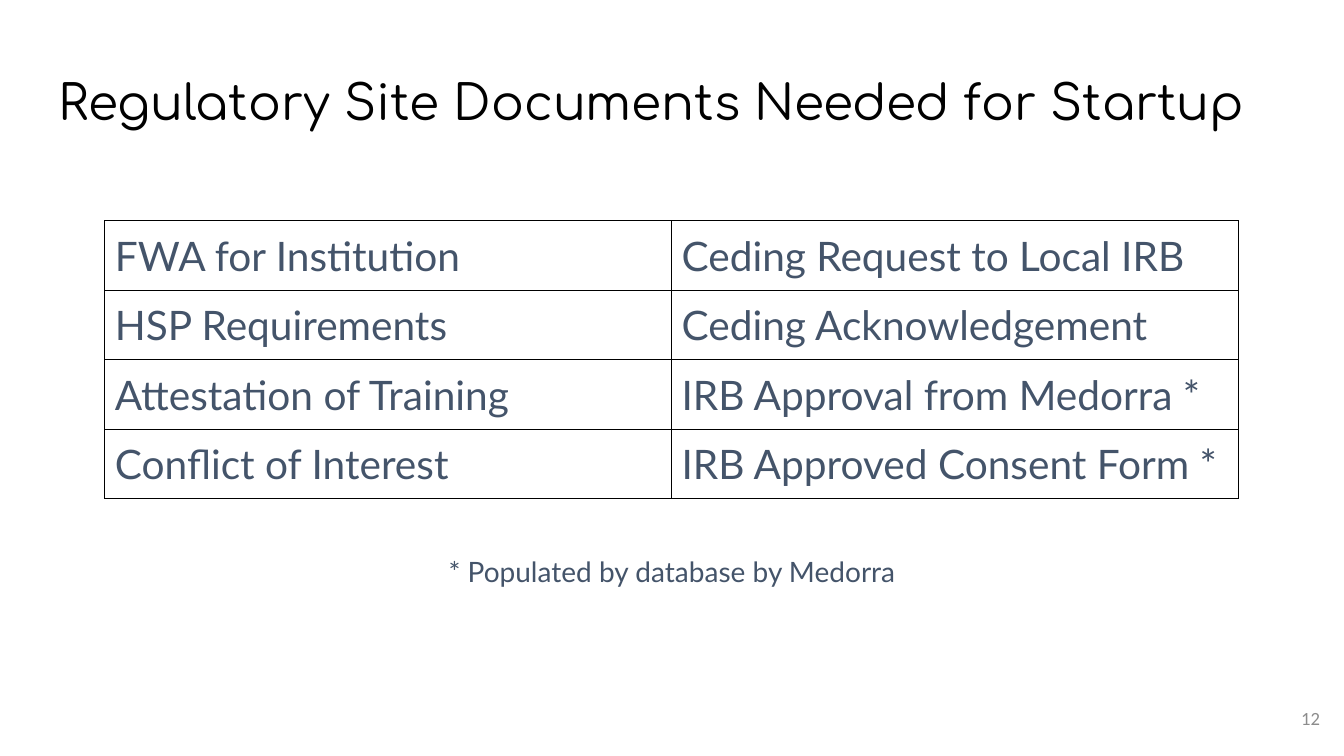
from lxml.etree import SubElement
from pptx import Presentation
from pptx.dml.color import RGBColor
from pptx.enum.text import MSO_ANCHOR, PP_ALIGN
from pptx.oxml.ns import qn
from pptx.util import Inches, Pt

BLACK, SLATE, GRAY = "000000", "44546A", "8C8C8C"

DOCUMENTS = [
    ("FWA for Institution", "Ceding Request to Local IRB"),
    ("HSP Requirements", "Ceding Acknowledgement"),
    ("Attestation of Training", "IRB Approval from Medorra *"),
    ("Conflict of Interest", "IRB Approved Consent Form *"),
]


def color(hex_value):
    return RGBColor.from_string(hex_value)


def set_margins(holder, side, top):
    holder.margin_left = holder.margin_right = Inches(side)
    holder.margin_top = holder.margin_bottom = Inches(top)


def add_run(paragraph, text, size, font, hex_value):
    run = paragraph.add_run()
    run.text = text
    run.font.size = Pt(size)
    run.font.name = font
    run.font.color.rgb = color(hex_value)


def add_text(slide, box, text, size, font, hex_value, margins,
             align=PP_ALIGN.LEFT, anchor=MSO_ANCHOR.TOP):
    frame = slide.shapes.add_textbox(*map(Inches, box)).text_frame
    frame.word_wrap = True
    frame.vertical_anchor = anchor
    set_margins(frame, *margins)
    paragraph = frame.paragraphs[0]
    paragraph.alignment = align
    add_run(paragraph, text, size, font, hex_value)
    return paragraph


def add_title(slide, box):
    title = add_text(slide, box, "Regulatory Site Documents Needed for Startup",
                     34.7, "Comfortaa", BLACK, (0.13, 0.13))
    title.line_spacing = 0.9


def add_borders(cell):
    properties = cell._tc.get_or_add_tcPr()
    for position, side in enumerate(("a:lnL", "a:lnR", "a:lnT", "a:lnB")):
        line = SubElement(properties, qn(side), w=str(Pt(0.75)))
        fill = SubElement(line, qn("a:solidFill"))
        SubElement(fill, qn("a:srgbClr"), val=BLACK)
        # Borders come before the cell fill
        properties.insert(position, line)


def add_documents(slide, box):
    frame = slide.shapes.add_table(len(DOCUMENTS), len(DOCUMENTS[0]),
                                   *map(Inches, box))
    table = frame.table
    table.first_row = table.horz_banding = False
    for row, names in enumerate(DOCUMENTS):
        for column, name in enumerate(names):
            cell = table.cell(row, column)
            cell.fill.background()
            set_margins(cell, 0.1, 0.1)
            cell.vertical_anchor = MSO_ANCHOR.MIDDLE if row == 0 else MSO_ANCHOR.TOP
            add_run(cell.text_frame.paragraphs[0], name, 29, "Lato", SLATE)
            add_borders(cell)


def add_footnote(slide, box):
    footnote = add_text(slide, box, "* Populated by database by Medorra",
                        20, "Lato", SLATE, (0.1, 0.1), PP_ALIGN.CENTER)
    footnote.line_spacing = 1.15
    footnote.space_before = Pt(12)


def add_page_number(slide, box):
    add_text(slide, box, "12", 13.3, "Calibri", GRAY, (0.1, 0.05),
             PP_ALIGN.RIGHT, MSO_ANCHOR.MIDDLE)


def main():
    deck = Presentation()
    deck.slide_width, deck.slide_height = Inches(13.33), Inches(7.5)
    slide = deck.slides.add_slide(deck.slide_layouts[6])
    add_title(slide, (0.45, 0.65, 12.42, 0.91))
    add_page_number(slide, (12.39, 6.84, 0.8, 0.57))
    add_documents(slide, (1.04, 2.19, 11.24, 2.76))
    add_footnote(slide, (2.3, 5.35, 8.73, 0.76))
    deck.save("out.pptx")


if __name__ == "__main__":
    main()
